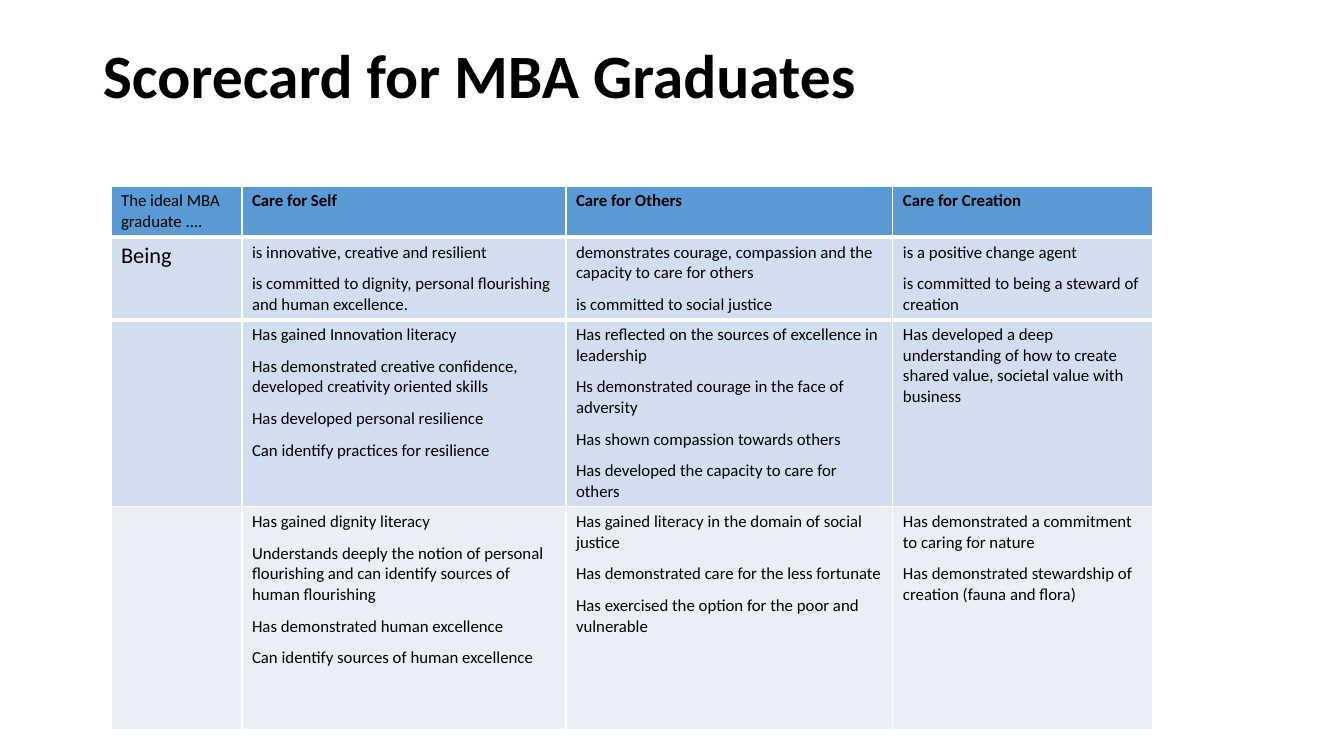
from lxml.etree import SubElement
from pptx import Presentation
from pptx.dml.color import RGBColor
from pptx.enum.text import MSO_ANCHOR
from pptx.oxml.ns import qn
from pptx.util import Pt

PX = 914400 / 100.8
BLACK = RGBColor(0x00, 0x00, 0x00)
WHITE = RGBColor(0xFF, 0xFF, 0xFF)
HEADER_BLUE = RGBColor(0x5B, 0x9B, 0xD5)
BAND_BLUE = RGBColor(0xD2, 0xDE, 0xEF)
PALE_BLUE = RGBColor(0xEA, 0xEF, 0xF7)


def px(length):
    return round(length * PX)


def add_text(paragraph, text, size, bold=False):
    run = paragraph.add_run()
    run.text = text
    run.font.name = "Calibri"
    run.font.size = Pt(size)
    run.font.bold = bold
    run.font.color.rgb = BLACK


prs = Presentation()
prs.slide_width, prs.slide_height = px(1344), px(756)
slide = prs.slides.add_slide(prs.slide_layouts[6])

# Scorecard content: each cell is a list of paragraphs
scorecard = [
    [
        ["The ideal MBA graduate ...."],
        ["Care for Self"],
        ["Care for Others"],
        ["Care for Creation"],
    ],
    [
        ["Being"],
        ["is innovative, creative and resilient",
         "is committed to dignity, personal flourishing and human excellence."],
        ["demonstrates courage, compassion and the capacity to care for others",
         "is committed to social justice"],
        ["is a positive change agent",
         "is committed to being a steward of creation"],
    ],
    [
        [],
        ["Has gained Innovation literacy",
         "Has demonstrated creative confidence, developed creativity oriented skills",
         "Has developed personal resilience",
         "Can identify practices for resilience"],
        ["Has reflected on the sources of excellence in leadership",
         "Hs demonstrated courage in the face of adversity",
         "Has shown compassion towards others",
         "Has developed the capacity to care for others"],
        ["Has developed a deep understanding of how to create shared value, "
         "societal value with business"],
    ],
    [
        [],
        ["Has gained dignity literacy",
         "Understands deeply the notion of personal flourishing and can identify "
         "sources of human flourishing",
         "Has demonstrated human excellence",
         "Can identify sources of human excellence"],
        ["Has gained literacy in the domain of social justice",
         "Has demonstrated care for the less fortunate",
         "Has exercised the option for the poor and vulnerable"],
        ["Has demonstrated a commitment to caring for nature",
         "Has demonstrated stewardship of creation (fauna and flora)"],
    ],
]
column_widths = [131, 324, 327, 260]
row_heights = [50, 82, 178, 223]
row_fills = [HEADER_BLUE, BAND_BLUE, BAND_BLUE, PALE_BLUE]
rule_widths = [1, 3, 3, 1, 1]  # horizontal rules from top to bottom, in points

# Table frame
table = slide.shapes.add_table(
    len(row_heights), len(column_widths), px(111), px(186),
    px(sum(column_widths)), px(sum(row_heights))).table
table.first_row = table.horz_banding = False
for column, width in zip(table.columns, column_widths):
    column.width = px(width)
for row, height in zip(table.rows, row_heights):
    row.height = px(height)

# Cells: borders, fill, text
for r, row_content in enumerate(scorecard):
    for c, lines in enumerate(row_content):
        cell = table.cell(r, c)
        borders = {"lnL": 1, "lnR": 1,
                   "lnT": rule_widths[r], "lnB": rule_widths[r + 1]}
        cell_props = cell._tc.get_or_add_tcPr()
        for side, width in borders.items():
            border = SubElement(cell_props, qn(f"a:{side}"), w=str(Pt(width)))
            line_fill = SubElement(border, qn("a:solidFill"))
            SubElement(line_fill, qn("a:srgbClr"), val=str(WHITE))
        cell.fill.solid()
        cell.fill.fore_color.rgb = row_fills[r]

        frame = cell.text_frame
        for i, line in enumerate(lines):
            paragraph = frame.add_paragraph() if i else frame.paragraphs[0]
            paragraph.space_after = Pt(8)
            add_text(paragraph, line, 16 if line == "Being" else 12,
                     bold=r == 0 and c > 0)

# Title
title = slide.shapes.add_textbox(px(93), px(40), px(1159), px(146)).text_frame
title.word_wrap = True
title.vertical_anchor = MSO_ANCHOR.TOP
title.paragraphs[0].line_spacing = 0.9
add_text(title.paragraphs[0], "Scorecard for MBA Graduates", 44, bold=True)

prs.save("out.pptx")
